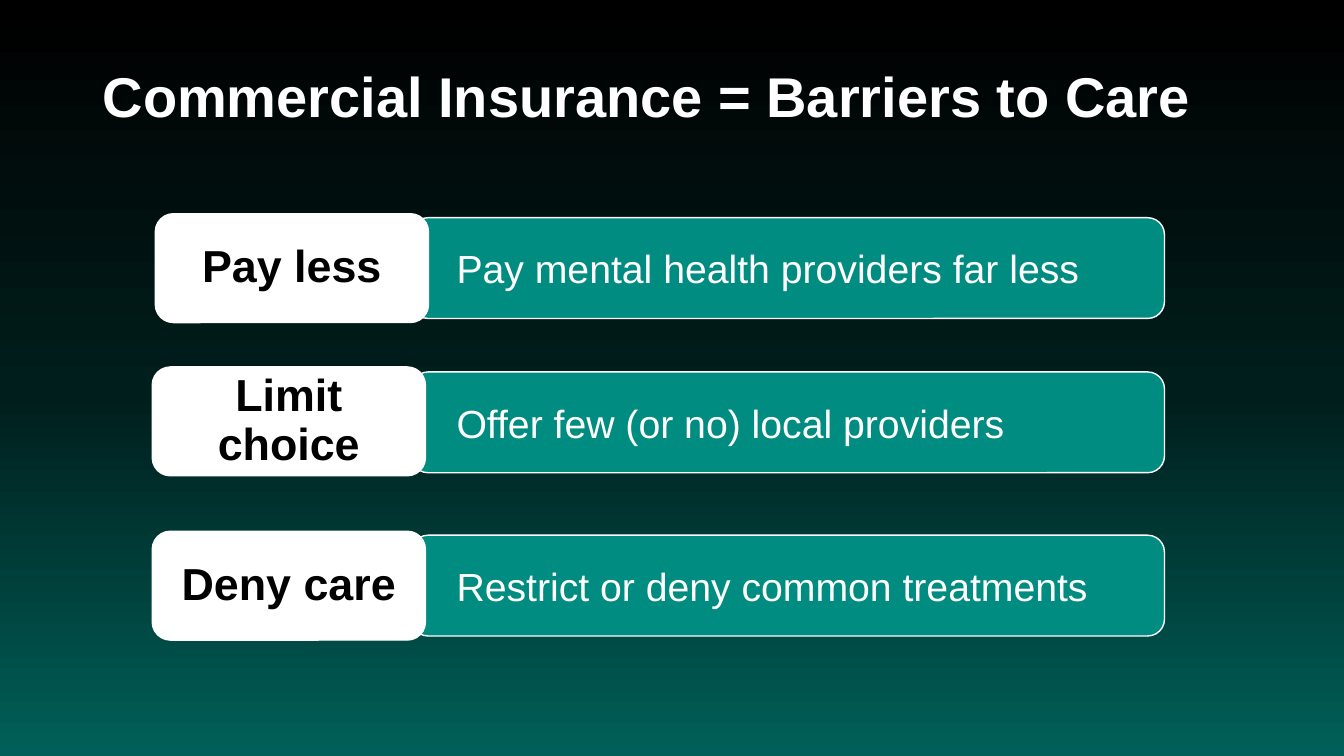
import copy

import pptx
import pptx.dml.color
import pptx.enum.shapes
import pptx.enum.text
import pptx.oxml.ns
import pptx.util

Inches = pptx.util.Inches
ALIGN = pptx.enum.text.PP_ALIGN


def rgb(value):
    return pptx.dml.color.RGBColor.from_string(value)


def write(shape, wording, size, color, bold, align, insets, spacing, after):
    """Put one middle-anchored paragraph in a shape; insets are left, top, right, bottom."""
    frame = shape.text_frame
    frame.word_wrap = True
    frame.vertical_anchor = pptx.enum.text.MSO_ANCHOR.MIDDLE
    frame.margin_left, frame.margin_top, frame.margin_right, frame.margin_bottom = map(Inches, insets)
    paragraph = frame.paragraphs[0]
    paragraph.alignment = align
    paragraph.line_spacing = spacing
    paragraph.space_after = pptx.util.Pt(after)
    run = paragraph.add_run()
    run.text = wording
    run.font.name = "Arial"
    run.font.size = pptx.util.Pt(size)
    run.font.bold = bold
    run.font.color.rgb = rgb(color)


deck = pptx.Presentation()
deck.slide_width, deck.slide_height = Inches(13.33), Inches(7.5)
slide = deck.slides.add_slide(deck.slide_layouts[6])

# Background: black fading down to teal
backdrop = slide.background.fill
backdrop.gradient()
backdrop.gradient_angle = 270
stop_list = slide.element.find(".//" + pptx.oxml.ns.qn("a:gsLst"))
stop_list.insert(1, copy.deepcopy(stop_list[0]))
fade = [(0, "000000"), (0.52, "001E1C"), (1, "006059")]
for stop, (position, color) in zip(backdrop.gradient_stops, fade):
    stop.position = position
    stop.color.rgb = rgb(color)

title = slide.shapes.add_textbox(Inches(0.92), Inches(0.4), Inches(12.06), Inches(1.17))
write(title, "Commercial Insurance = Barriers to Care", 40, "FFFFFF", True,
      ALIGN.LEFT, (0.1, 0.05, 0.1, 0.05), 0.9, 12)

# Each barrier: a teal bar with its white label overlapping the left end
bar_style = ("008C81", 28, "FFFFFF", False, ALIGN.LEFT, (0.4, 0.05, 0.1, 0.05), 1.0, 12)
label_style = ("FFFFFF", 32, "000000", True, ALIGN.CENTER, (0.14, 0.14, 0.14, 0.14), 0.9, 0)
barriers = [
    ("Pay less", 1.54, 2.12, "Pay mental health providers far less", 2.16),
    ("Limit choice", 1.51, 3.64, "Offer few (or no) local providers", 3.69),
    ("Deny care", 1.51, 5.27, "Restrict or deny common treatments", 5.31),
]
for label, label_left, label_top, practice, bar_top in barriers:
    for wording, box, style in (
        (practice, (4.08, bar_top, 7.47, 1), bar_style),
        (label, (label_left, label_top, 2.71, 1.08), label_style),
    ):
        fill, *text_style = style
        panel = slide.shapes.add_shape(
            pptx.enum.shapes.MSO_SHAPE.ROUNDED_RECTANGLE, *map(Inches, box))
        panel.shadow.inherit = False
        panel.fill.solid()
        panel.fill.fore_color.rgb = rgb(fill)
        panel.line.color.rgb = rgb("FFFFFF")
        panel.line.width = pptx.util.Pt(1)
        write(panel, wording, *text_style)

deck.save("out.pptx")
